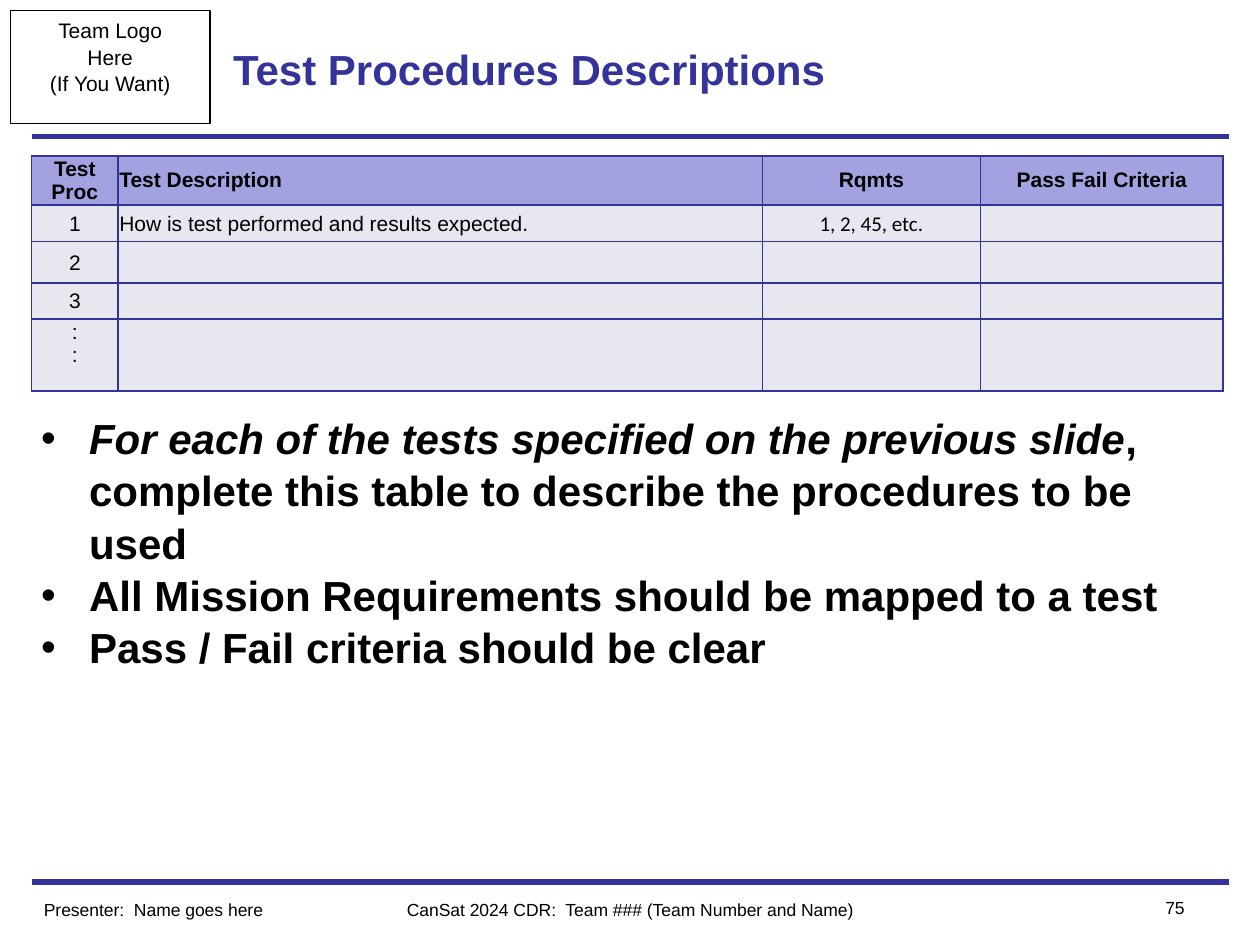
import lxml.etree
import pptx
import pptx.dml.color
import pptx.enum.shapes
import pptx.enum.text
import pptx.oxml.ns
import pptx.util

NAVY = pptx.dml.color.RGBColor(0x33, 0x33, 0x99)
LAVENDER = pptx.dml.color.RGBColor(0xA2, 0xA2, 0xE0)
PALE = pptx.dml.color.RGBColor(0xE7, 0xE7, 0xEF)
BLACK = pptx.dml.color.RGBColor(0, 0, 0)
LEFT = pptx.enum.text.PP_ALIGN.LEFT
CENTER = pptx.enum.text.PP_ALIGN.CENTER
RIGHT = pptx.enum.text.PP_ALIGN.RIGHT
TOP = pptx.enum.text.MSO_ANCHOR.TOP
MIDDLE = pptx.enum.text.MSO_ANCHOR.MIDDLE


class ReviewSlide:
    """Draws a review slide on a grid of 120 columns by 90 rows."""

    def __init__(self, deck):
        self.slide = deck.slides.add_slide(deck.slide_layouts[5])
        self.shapes = self.slide.shapes
        self.unit = deck.slide_width / 120

    def span(self, *units):
        return [pptx.util.Emu(round(self.unit * count)) for count in units]

    def element(self, parent, tag, **attributes):
        return lxml.etree.SubElement(parent, pptx.oxml.ns.qn(tag), attributes)

    def fill_text(self, frame, text, size, align=LEFT, color=BLACK, bold=False,
                  font="Arial", spacing=1.0, anchor=TOP):
        frame.text = text
        frame.word_wrap = True
        frame.vertical_anchor = anchor
        for paragraph in frame.paragraphs:
            paragraph.alignment = align
            paragraph.line_spacing = spacing
            for run in paragraph.runs:
                self.style(run.font, size, color, bold, font)

    def style(self, target, size, color=BLACK, bold=False, font="Arial"):
        target.size = pptx.util.Pt(size)
        target.name = font
        target.bold = bold
        target.color.rgb = color

    def title(self, text, *box):
        heading = self.shapes.title
        heading.left, heading.top, heading.width, heading.height = self.span(*box)
        self.fill_text(heading.text_frame, text, 24, color=NAVY, bold=True, anchor=MIDDLE)

    def rule(self, row):
        line = self.shapes.add_connector(
            pptx.enum.shapes.MSO_CONNECTOR.STRAIGHT, *self.span(3, row, 117, row))
        line.line.color.rgb = NAVY
        line.line.width = pptx.util.Pt(3)
        self.element(line._element.spPr, "a:effectLst")

    def logo_box(self, text, *box):
        frame = self.shapes.add_shape(
            pptx.enum.shapes.MSO_SHAPE.RECTANGLE, *self.span(*box))
        frame.shadow.inherit = False
        frame.fill.background()
        frame.line.color.rgb = BLACK
        frame.line.width = pptx.util.Pt(0.75)
        self.fill_text(frame.text_frame, text, 12, CENTER, spacing=1.05)

    def label(self, text, align, *box):
        self.fill_text(self.shapes.add_textbox(*self.span(*box)).text_frame, text, 10, align)

    def bullets(self, items, *box):
        frame = self.shapes.add_textbox(*self.span(*box)).text_frame
        frame.word_wrap = True
        for index, (emphasis, rest) in enumerate(items):
            paragraph = frame.add_paragraph() if index else frame.paragraphs[0]
            properties = paragraph._p.get_or_add_pPr()
            indent = pptx.util.Inches(0.38)
            properties.set("marL", str(indent))
            properties.set("indent", str(-indent))
            self.element(properties, "a:buFont", typeface="Arial")
            self.element(properties, "a:buChar", char="•")
            paragraph.line_spacing = 1.04
            for text, italic in ((emphasis, True), (rest, False)):
                if text:
                    run = paragraph.add_run()
                    run.text = text
                    self.style(run.font, 24, bold=True)
                    run.font.italic = italic

    def border(self, cell):
        properties = cell._tc.get_or_add_tcPr()
        for position, side in enumerate(("a:lnL", "a:lnR", "a:lnT", "a:lnB")):
            edge = lxml.etree.Element(pptx.oxml.ns.qn(side), w=str(pptx.util.Pt(1)))
            paint = self.element(edge, "a:solidFill")
            self.element(paint, "a:srgbClr", val=str(NAVY))
            properties.insert(position, edge)

    def table(self, rows, widths, heights, left, top):
        grid = self.shapes.add_table(
            len(rows), len(widths),
            *self.span(left, top, sum(widths), sum(heights))).table
        for column, width in zip(grid.columns, self.span(*widths)):
            column.width = width
        for row, height in zip(grid.rows, self.span(*heights)):
            row.height = height
        for row_index, texts in enumerate(rows):
            header = row_index == 0
            for column_index, text in enumerate(texts):
                cell = grid.cell(row_index, column_index)
                cell.margin_left = cell.margin_right = pptx.util.Inches(0.01)
                cell.margin_top = pptx.util.Inches(0.01)
                cell.margin_bottom = 0
                cell.fill.solid()
                cell.fill.fore_color.rgb = LAVENDER if header else PALE
                self.fill_text(cell.text_frame, text, 12,
                               LEFT if column_index == 1 else CENTER, bold=header,
                               font="Calibri" if column_index == 2 and not header else "Arial",
                               spacing=0.95 if header else 1.0)
                cell.vertical_anchor = TOP if "\n" in text else MIDDLE
                if not text:
                    cell.text_frame.paragraphs[0].font.size = pptx.util.Pt(12)
                self.border(cell)


def main():
    deck = pptx.Presentation()
    deck.slide_width = pptx.util.Inches(10)
    deck.slide_height = pptx.util.Inches(7.5)
    page = ReviewSlide(deck)
    for row in (84, 13):
        page.rule(row)
    page.logo_box("Team Logo\nHere\n(If You Want)", 1, 1, 19, 10.8)
    page.title("Test Procedures Descriptions", 21, 1, 71, 11)
    page.label("75", RIGHT, 105, 84.85, 9, 3.25)
    page.table(
        [("Test Proc", "Test Description", "Rqmts", "Pass Fail Criteria"),
         ("1", "How is test performed and results expected.", "1, 2, 45, etc.", ""),
         ("2", "", "", ""),
         ("3", "", "", ""),
         (":\n:", "", "", "")],
        (8.25, 61.35, 20.8, 23.1), (4.65, 3.45, 3.95, 3.45, 6.85), 3, 14.85)
    page.bullets(
        [("For each of the tests specified on the previous slide",
          ", complete this table to describe the procedures to be used"),
         ("", "All Mission Requirements should be mapped to a test"),
         ("", "Pass / Fail criteria should be clear")],
        2.75, 38.5, 114, 43.7)
    page.label("CanSat 2024 CDR:  Team ### (Team Number and Name)", CENTER, 36, 85, 48, 3.25)
    page.label("Presenter:  Name goes here", LEFT, 3, 85, 30, 3.25)
    deck.save("out.pptx")


if __name__ == "__main__":
    main()
